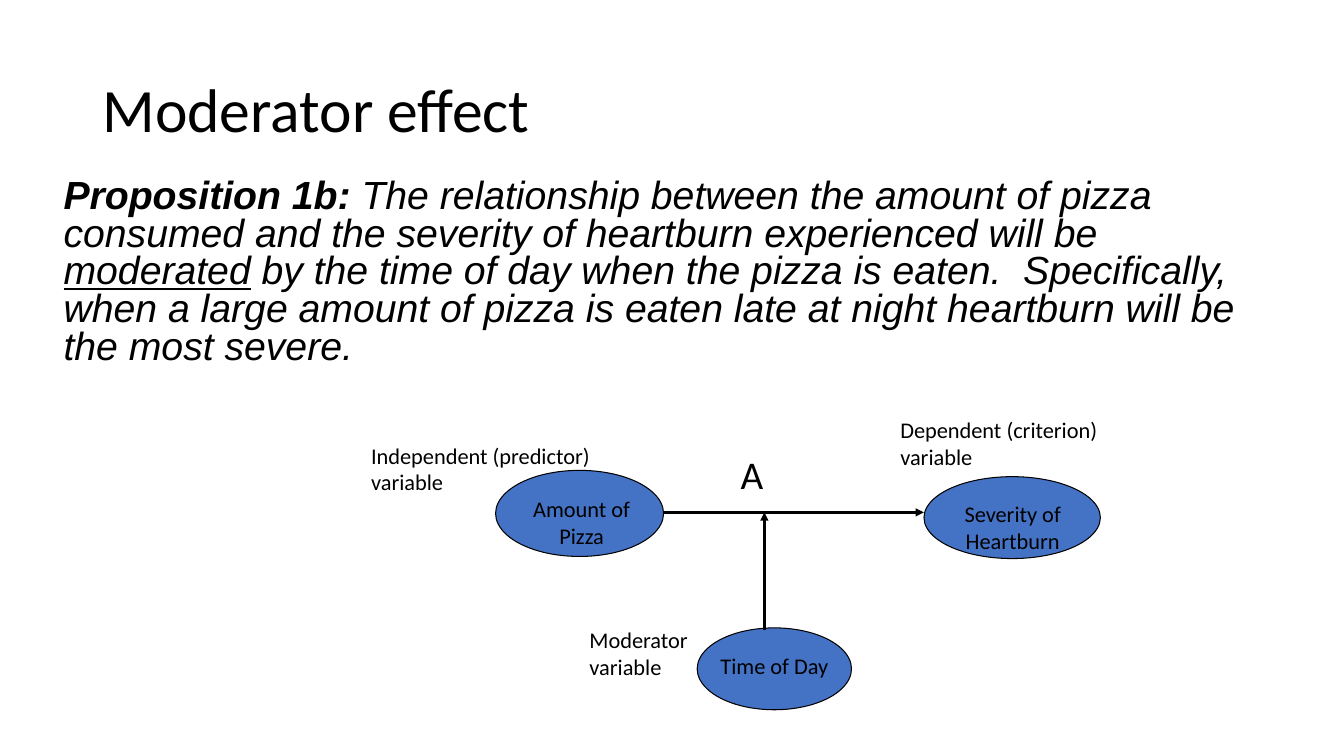
from lxml import etree
from pptx import Presentation
from pptx.dml.color import RGBColor
from pptx.enum.shapes import MSO_CONNECTOR, MSO_SHAPE
from pptx.enum.text import MSO_ANCHOR, MSO_AUTO_SIZE, PP_ALIGN
from pptx.oxml.ns import qn
from pptx.util import Pt

LEFT, CENTER = PP_ALIGN.LEFT, PP_ALIGN.CENTER
TOP, MIDDLE = MSO_ANCHOR.TOP, MSO_ANCHOR.MIDDLE
NO_FIT = MSO_AUTO_SIZE.NONE
ELLIPSE, STRAIGHT = MSO_SHAPE.OVAL, MSO_CONNECTOR.STRAIGHT

PX = 9525  # EMU, 96 px to the inch
THEME = {
    "ink": RGBColor(0x00, 0x00, 0x00),
    "node": RGBColor(0x44, 0x72, 0xC4),
    "font": "Calibri",
    "body_font": "Arial",
    "title": 44,
    "large": 28,
    "label": 16,
    "outline": 0.75,
    "arrow": 1.75,
}


def px(*lengths):
    return [n * PX for n in lengths]


def set_font(font, size, name=THEME["font"]):
    font.name = name
    font.size = Pt(size)
    font.color.rgb = THEME["ink"]


prs = Presentation()
prs.slide_width, prs.slide_height = px(1280, 720)
s = prs.slides.add_slide(prs.slide_layouts[1])

# Title and proposition
title, body = s.placeholders
for sp, box, anchor in (
    (title, (88, 38, 1104, 139), MIDDLE),
    (body, (51, 166, 1162, 192), TOP),
):
    sp.left, sp.top, sp.width, sp.height = px(*box)
    tf = sp.text_frame
    tf.auto_size = NO_FIT
    tf.word_wrap = True
    tf.vertical_anchor = anchor

p = title.text_frame.paragraphs[0]
p.text = "Moderator effect"
p.alignment = LEFT
p.line_spacing = 0.9
set_font(p.font, THEME["title"])

p = body.text_frame.paragraphs[0]
p.line_spacing = 0.8
p.space_before = Pt(10)
set_font(p.font, THEME["large"], THEME["body_font"])
p.font.italic = True
pPr = p._p.get_or_add_pPr()
pPr.set("marL", "0")
pPr.set("indent", "0")
pPr.insert_element_before(
    pPr.makeelement(qn("a:buNone")), "a:tabLst", "a:defRPr", "a:extLst"
)
for text, bold, underline in (
    ("Proposition 1b:", True, False),
    (" The relationship between the amount of pizza consumed and the severity "
     "of heartburn experienced will be ", False, False),
    ("moderated", False, True),
    (" by the time of day when the pizza is eaten.  Specifically, when a large "
     "amount of pizza is eaten late at night heartburn will be the most severe.",
     False, False),
):
    r = p.add_run()
    r.text = text
    r.font.bold = bold
    r.font.underline = underline

# Variables
for box in ((472, 448, 160, 82), (880, 454, 168, 78), (664, 598, 147, 78)):
    sp = s.shapes.add_shape(ELLIPSE, *px(*box))
    sp.shadow.inherit = False
    sp.fill.solid()
    sp.fill.fore_color.rgb = THEME["node"]
    sp.line.color.rgb = THEME["ink"]
    sp.line.width = Pt(THEME["outline"])

# Effect of pizza on heartburn, and the moderator acting on it
for ends in ((632, 488, 880, 488), (728, 600, 728, 488)):
    arrow = s.shapes.add_connector(STRAIGHT, *px(*ends))
    arrow.line.color.rgb = THEME["ink"]
    arrow.line.width = Pt(THEME["arrow"])
    etree.SubElement(arrow.line._get_or_add_ln(), qn("a:tailEnd"), type="triangle")
    etree.SubElement(arrow._element.spPr, qn("a:effectLst"))

# Names and roles of the variables
for text, box, align, size in (
    ("Amount of Pizza", (480, 467, 148, 61), CENTER, THEME["label"]),
    ("Severity of Heartburn", (887, 472, 155, 61), CENTER, THEME["label"]),
    ("Time of Day", (670, 616, 135, 36), CENTER, THEME["label"]),
    ("Independent (predictor) variable", (344, 416, 258, 61), LEFT, THEME["label"]),
    ("Dependent (criterion) variable", (848, 392, 232, 61), LEFT, THEME["label"]),
    ("Moderator variable", (552, 592, 152, 61), LEFT, THEME["label"]),
    ("A", (696, 424, 48, 55), LEFT, THEME["large"]),
):
    tf = s.shapes.add_textbox(*px(*box)).text_frame
    tf.word_wrap = True
    p = tf.paragraphs[0]
    p.text = text
    p.alignment = align
    set_font(p.font, size)

prs.save("out.pptx")
